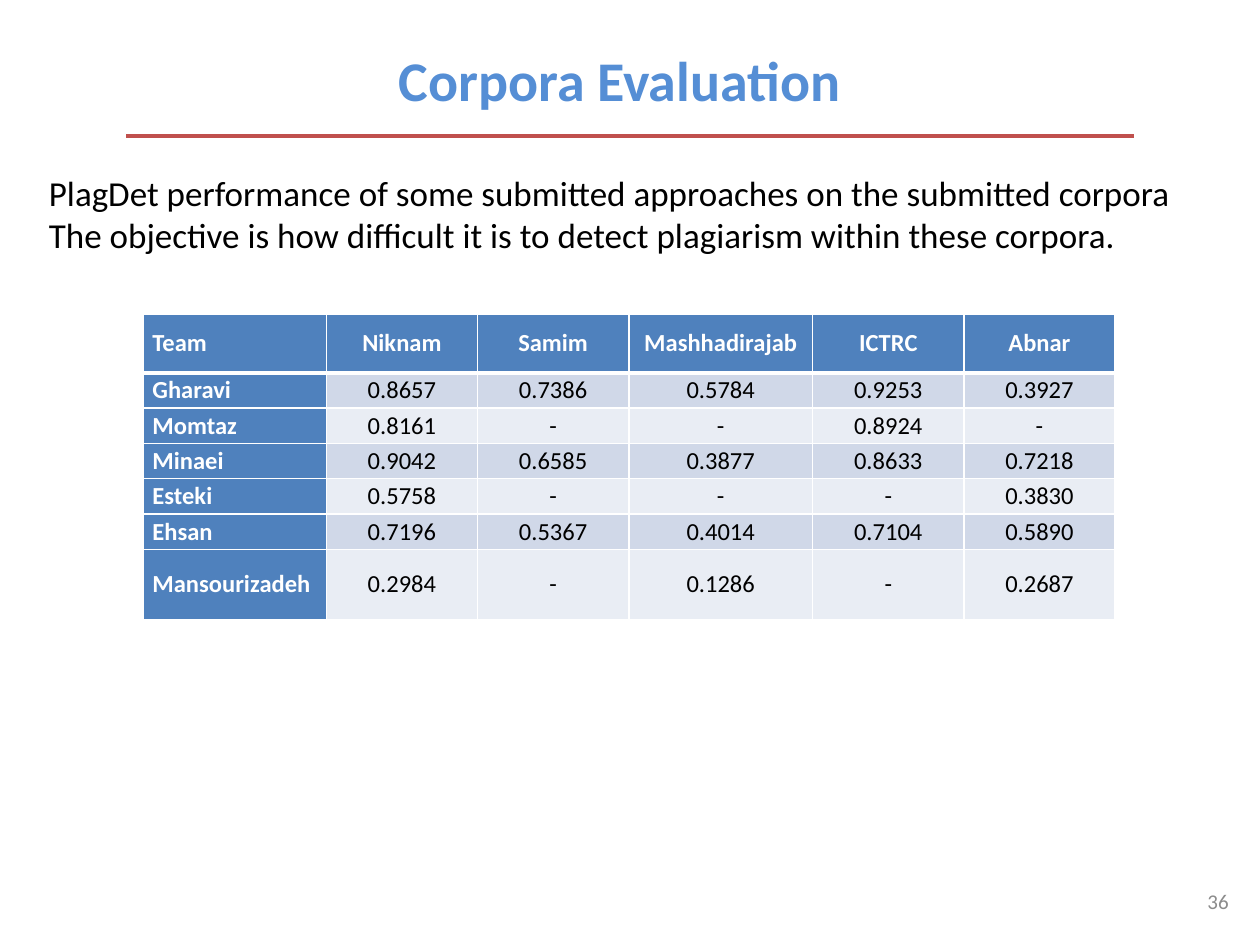
from dataclasses import dataclass

import lxml.etree
import pptx
import pptx.dml.color
import pptx.enum.shapes
import pptx.enum.text
import pptx.oxml.ns
import pptx.util
from pptx.util import Inches

ALIGN = pptx.enum.text.PP_ALIGN
ANCHOR = pptx.enum.text.MSO_ANCHOR
FONT = "Calibri"
WHITE, BLACK, BLUE = "FFFFFF", "000000", "4F81BD"
BANDS = ("D0D8E8", "E9EDF4")

TABLE_LEFT, TABLE_TOP = 1.14, 2.49
COLUMN_WIDTHS = (1.45, 1.2, 1.2, 1.46, 1.2, 1.2)
ROW_HEIGHTS = (0.47, *[0.28] * 5, 0.56)
SCORES = (
    ("Team", "Niknam", "Samim", "Mashhadirajab", "ICTRC", "Abnar"),
    ("Gharavi", "0.8657", "0.7386", "0.5784", "0.9253", "0.3927"),
    ("Momtaz", "0.8161", "-", "-", "0.8924", "-"),
    ("Minaei", "0.9042", "0.6585", "0.3877", "0.8633", "0.7218"),
    ("Esteki", "0.5758", "-", "-", "-", "0.3830"),
    ("Ehsan", "0.7196", "0.5367", "0.4014", "0.7104", "0.5890"),
    ("Mansourizadeh", "0.2984", "-", "0.1286", "-", "0.2687"),
)


@dataclass(frozen=True)
class TextStyle:
    size: float
    color: str
    bold: bool = False
    align: ALIGN = ALIGN.LEFT


@dataclass(frozen=True)
class TextBlock:
    left: float
    top: float
    width: float
    height: float
    lines: tuple[str, ...]
    style: TextStyle
    anchor: ANCHOR = ANCHOR.MIDDLE
    wrap: bool = True


TEXT_BLOCKS = (
    TextBlock(0.42, 0, 9, 1.25, ("Corpora Evaluation",),
              TextStyle(32, "558ED5", True, ALIGN.CENTER)),
    TextBlock(0.29, 1.31, 9.2, 0.77,
              ("PlagDet performance of some submitted approaches on the submitted corpora",
               "The objective is how difficult it is to detect plagiarism within these corpora."),
              TextStyle(20, BLACK), ANCHOR.TOP, wrap=False),
    TextBlock(7.52, 6.95, 2.33, 0.4, ("36",),
              TextStyle(12, "8C8C8C", align=ALIGN.RIGHT)),
)


def rgb(color: str) -> pptx.dml.color.RGBColor:
    return pptx.dml.color.RGBColor.from_string(color)


def write_line(para, text: str, style: TextStyle) -> None:
    para.alignment = style.align
    span = para.add_run()
    span.text = text
    span.font.name = FONT
    span.font.size = pptx.util.Pt(style.size)
    span.font.bold = style.bold
    span.font.color.rgb = rgb(style.color)


def draw_text(page, block: TextBlock) -> None:
    box = page.shapes.add_textbox(Inches(block.left), Inches(block.top),
                                  Inches(block.width), Inches(block.height))
    frame = box.text_frame
    frame.word_wrap = block.wrap
    frame.vertical_anchor = block.anchor
    for index, text in enumerate(block.lines):
        para = frame.add_paragraph() if index else frame.paragraphs[0]
        write_line(para, text, block.style)


def draw_title_rule(page) -> None:
    rule = page.shapes.add_connector(pptx.enum.shapes.MSO_CONNECTOR.STRAIGHT,
                                     Inches(1), Inches(1.08), Inches(9), Inches(1.08))
    rule.line.color.rgb = rgb("C0504D")
    rule.line.width = pptx.util.Pt(2.25)
    lxml.etree.SubElement(rule._element.spPr, pptx.oxml.ns.qn("a:effectLst"))


def add_borders(cell, top: float, bottom: float) -> None:
    """Add white cell borders; must run before the cell's fill is set."""
    qn = pptx.oxml.ns.qn
    properties = cell._tc.get_or_add_tcPr()
    for side, points in (("L", 1), ("R", 1), ("T", top), ("B", bottom)):
        border = lxml.etree.SubElement(properties, qn(f"a:ln{side}"),
                                       w=str(pptx.util.Pt(points)))
        fill = lxml.etree.SubElement(border, qn("a:solidFill"))
        lxml.etree.SubElement(fill, qn("a:srgbClr"), val=WHITE)


def fill_cell(cell, text: str, row: int, column: int) -> None:
    is_label = row == 0 or column == 0
    cell.vertical_anchor = ANCHOR.MIDDLE
    cell.margin_left = cell.margin_right = Inches(0.07)
    cell.margin_top = cell.margin_bottom = 0
    add_borders(cell, top=3 if row == 1 else 1, bottom=3 if row == 0 else 1)
    cell.fill.solid()
    cell.fill.fore_color.rgb = rgb(BLUE if is_label else BANDS[(row - 1) % 2])
    if column:
        align = ALIGN.CENTER
    else:
        align = ALIGN.JUSTIFY if row else ALIGN.LEFT
    para = cell.text_frame.paragraphs[0]
    para.space_after = pptx.util.Pt(4)
    write_line(para, text, TextStyle(14, WHITE if is_label else BLACK, is_label, align))


def draw_score_table(page) -> None:
    table = page.shapes.add_table(
        len(SCORES), len(COLUMN_WIDTHS), Inches(TABLE_LEFT), Inches(TABLE_TOP),
        Inches(sum(COLUMN_WIDTHS)), Inches(sum(ROW_HEIGHTS))).table
    table.first_col = True
    for column, width in zip(table.columns, COLUMN_WIDTHS):
        column.width = Inches(width)
    for row, height in zip(table.rows, ROW_HEIGHTS):
        row.height = Inches(height)
    for row, values in enumerate(SCORES):
        for column, text in enumerate(values):
            fill_cell(table.cell(row, column), text, row, column)


def main() -> None:
    deck = pptx.Presentation()
    deck.slide_width, deck.slide_height = Inches(10), Inches(7.5)
    page = deck.slides.add_slide(deck.slide_layouts[6])
    draw_title_rule(page)
    draw_score_table(page)
    for block in TEXT_BLOCKS:
        draw_text(page, block)
    deck.save("out.pptx")


if __name__ == "__main__":
    main()
